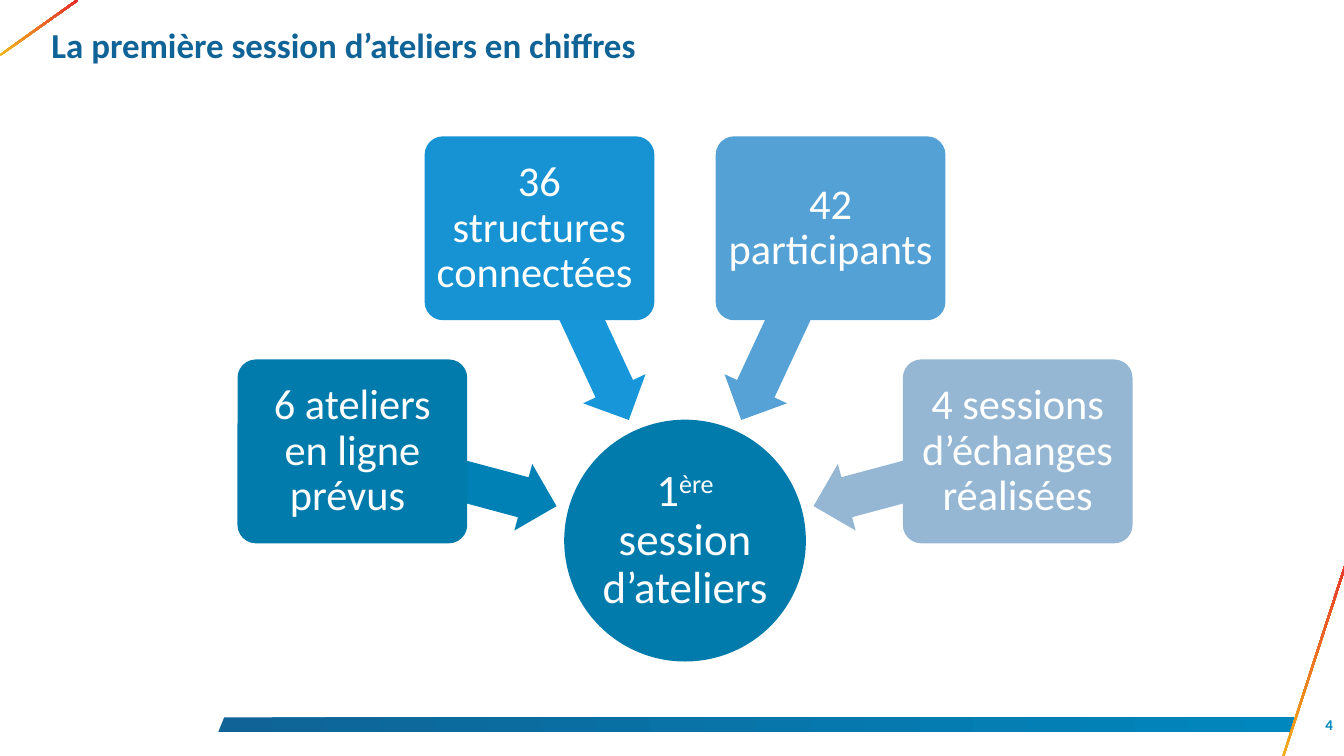
"""Build the slide with the key figures of the first workshop session."""
import math

from pptx import Presentation
from pptx.dml.color import RGBColor
from pptx.enum.shapes import MSO_SHAPE
from pptx.enum.text import MSO_ANCHOR, MSO_AUTO_SIZE, PP_ALIGN
from pptx.util import Pt

RECTANGLE = MSO_SHAPE.RECTANGLE
ROUNDED = MSO_SHAPE.ROUNDED_RECTANGLE
ELLIPSE = MSO_SHAPE.OVAL
ARROW = MSO_SHAPE.LEFT_ARROW
TOP, MIDDLE = MSO_ANCHOR.TOP, MSO_ANCHOR.MIDDLE
LEFT, CENTER, RIGHT = PP_ALIGN.LEFT, PP_ALIGN.CENTER, PP_ALIGN.RIGHT
NO_AUTOFIT = MSO_AUTO_SIZE.NONE

FONT = "Calibri"
WHITE, NAVY, BLUE = "FFFFFF", "0F6396", "0087BD"
YELLOW, RED = "F2B818", "E62930"
HUB_FILL = "007BAC"

HUB_X, HUB_Y, HUB_SIZE = 549, 433, 193.7
BOX_RADIUS, BOX_WIDTH, BOX_HEIGHT = 276, 184.1, 147.3
ARROW_RADIUS, ARROW_WIDTH, ARROW_HEIGHT = 191.2, 169.2, 55.2
FIRST_ANGLE, ANGLE_STEP = 195, 50

FIGURES = [
    ("6 ateliers en ligne prévus ", HUB_FILL, "0081B5"),
    ("36 structures connectées ", "1793D4", "1796D9"),
    ("42 participants", "54A1D6", "56A2D7"),
    ("4 sessions d’échanges réalisées", "95B7D4", "95B7D4"),
]


def color(value):
    """Return the colour for a hex string."""
    return RGBColor.from_string(value)


def add_span(para, text, size, fill=WHITE, bold=False, baseline=None):
    """Append formatted text to a paragraph."""
    span = para.add_run()
    span.text = text
    font = span.font
    font.name, font.size, font.bold = FONT, Pt(size), bold
    font.color.rgb = color(fill)
    if baseline:
        font._element.set("baseline", str(baseline))


def write(shape, spans, inset=0, align=CENTER, anchor=MIDDLE, spacing=None):
    """Fill a shape with one paragraph made of (text, format) spans."""
    frame = shape.text_frame
    frame.word_wrap = True
    frame.auto_size = NO_AUTOFIT
    frame.vertical_anchor = anchor
    frame.margin_left = frame.margin_right = Pt(inset)
    frame.margin_top = frame.margin_bottom = Pt(inset)
    para = frame.paragraphs[0]
    para.alignment = align
    para.line_spacing = spacing
    for text, style in spans:
        add_span(para, text, **style)


def paint(shape, fill):
    """Give a shape a flat fill without outline or shadow."""
    shape.shadow.inherit = False
    shape.line.fill.background()
    shape.fill.solid()
    shape.fill.fore_color.rgb = color(fill)


def paint_gradient(shape, start, end, angle=0):
    """Give a shape a two-colour gradient, its angle counted clockwise."""
    shape.shadow.inherit = False
    shape.line.fill.background()
    shape.fill.gradient()
    shape.fill.gradient_angle = -angle % 360
    for stop, value, position in zip(shape.fill.gradient_stops, (start, end), (0, 1)):
        stop.color.rgb = color(value)
        stop.position = position


def add_centered(page, kind, x, y, width, height, rotation=0):
    """Add a preset shape around a centre point."""
    shape = page.shapes.add_shape(
        kind, Pt(x - width / 2), Pt(y - height / 2), Pt(width), Pt(height))
    shape.rotation = rotation
    return shape


def around_hub(angle, radius):
    """Return the point at an angle and distance from the hub centre."""
    turn = math.radians(angle)
    return HUB_X + radius * math.cos(turn), HUB_Y + radius * math.sin(turn)


def add_frame(page):
    """Add the bottom bar and the two slanted corner lines."""
    builder = page.shapes.build_freeform(Pt(179.7), Pt(574.6))
    builder.add_line_segments(
        [(Pt(1039), Pt(574.6)), (Pt(1034.6), Pt(586.1)), (Pt(175), Pt(586.1))])
    paint_gradient(builder.convert_to_shape(), NAVY, BLUE)
    for x, y, length, rotation, angle in (
            (1054.1, 527, 167, 288, 328), (30.9, 22.3, 76.3, 324.6, 4)):
        line = add_centered(page, RECTANGLE, x, y, length, 1.6, rotation)
        paint_gradient(line, YELLOW, RED, angle)


def add_title(page, text):
    """Place the title placeholder and write the title."""
    title = page.shapes.title
    title.left, title.top = Pt(38.2), Pt(15.8)
    title.width, title.height = Pt(1000.8), Pt(64.8)
    write(title, [(text, dict(size=28, fill=NAVY, bold=True))],
          inset=3, align=LEFT, anchor=TOP)


def add_hub(page):
    """Add the central circle."""
    hub = add_centered(page, ELLIPSE, HUB_X, HUB_Y, HUB_SIZE, HUB_SIZE)
    paint(hub, HUB_FILL)
    write(hub, [("1", dict(size=36)), ("ère", dict(size=36, baseline=30000)),
                (" session d’ateliers ", dict(size=36))], inset=2, spacing=0.9)


def add_figure(page, angle, text, box_fill, arrow_fill):
    """Add a figure box and its arrow towards the hub."""
    arrow = add_centered(page, ARROW, *around_hub(angle, ARROW_RADIUS),
                         ARROW_WIDTH, ARROW_HEIGHT, angle)
    arrow.adjustments[0], arrow.adjustments[1] = 0.6, 0.5
    paint(arrow, arrow_fill)
    box = add_centered(page, ROUNDED, *around_hub(angle, BOX_RADIUS),
                       BOX_WIDTH, BOX_HEIGHT)
    box.adjustments[0] = 0.1
    paint(box, box_fill)
    write(box, [(text, dict(size=34))], inset=5, spacing=0.9)


def add_page_number(page, number):
    """Add the page number at the bottom right."""
    box = page.shapes.add_textbox(Pt(1027.4), Pt(571.7), Pt(41), Pt(16.6))
    write(box, [(number, dict(size=12, fill=BLUE, bold=True))], align=RIGHT)


def main():
    """Build and save the deck."""
    deck = Presentation()
    deck.slide_width, deck.slide_height = Pt(1077.1), Pt(605.5)
    page = deck.slides.add_slide(deck.slide_layouts[5])
    add_frame(page)
    add_title(page, "La première session d’ateliers en chiffres")
    add_hub(page)
    for index, figure in enumerate(FIGURES):
        add_figure(page, FIRST_ANGLE + index * ANGLE_STEP, *figure)
    add_page_number(page, "4")
    deck.save("out.pptx")


if __name__ == "__main__":
    main()
